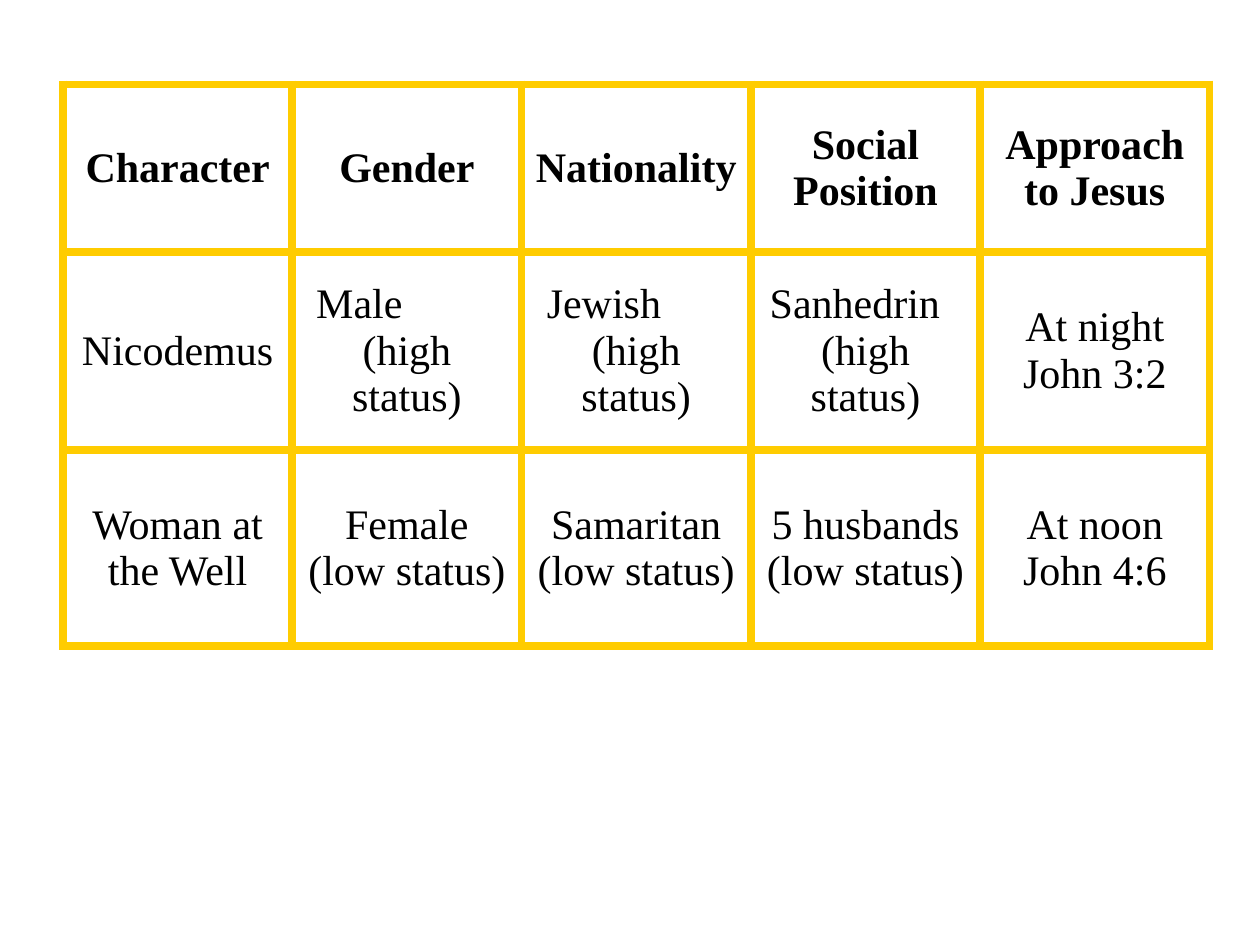
import pptx
import pptx.dml.color
import pptx.enum.text
import pptx.oxml
import pptx.oxml.ns
import pptx.util
from pptx.util import Inches

COLORS = {"text": "000000", "border": "FFCC00", "cell": "FFFFFF"}
FONT = "Times New Roman"
FONT_SIZE = 24
BORDER_WIDTH = 5

# Each cell is a list of paragraphs.
ROWS = [
    [["Character"], ["Gender"], ["Nationality"], ["Social Position"], ["Approach to Jesus"]],
    [["Nicodemus"], ["Male", "(high status)"], ["Jewish", "(high status)"],
     ["Sanhedrin", "(high status)"], ["At night", "John 3:2"]],
    [["Woman at the Well"], ["Female", "(low status)"], ["Samaritan", "(low status)"],
     ["5 husbands", "(low status)"], ["At noon", "John 4:6"]],
]
LEFT_INDENTS = {"Male": 0.09, "Jewish": 0.1, "Sanhedrin": 0.05}  # left-aligned words
ROW_HEIGHTS = [1.33, 1.57, 1.56]
COLUMN_WIDTH = 1.82
TABLE_LEFT, TABLE_TOP = 0.5, 0.67


def rgb(name):
    return pptx.dml.color.RGBColor.from_string(COLORS[name])


def add_borders(cell):
    properties = cell._tc.get_or_add_tcPr()
    for position, side in enumerate(("lnL", "lnR", "lnT", "lnB")):
        line = pptx.oxml.parse_xml(
            f'<a:{side} {pptx.oxml.ns.nsdecls("a")} w="{pptx.util.Pt(BORDER_WIDTH)}">'
            f'<a:solidFill><a:srgbClr val="{COLORS["border"]}"/></a:solidFill></a:{side}>')
        properties.insert(position, line)


def fill_cell(cell, lines, bold):
    cell.fill.solid()
    cell.fill.fore_color.rgb = rgb("cell")
    cell.vertical_anchor = pptx.enum.text.MSO_ANCHOR.MIDDLE
    cell.text = "\n".join(lines)
    for paragraph in cell.text_frame.paragraphs:
        paragraph.alignment = pptx.enum.text.PP_ALIGN.CENTER
        paragraph.font.name = FONT
        paragraph.font.size = pptx.util.Pt(FONT_SIZE)
        paragraph.font.bold = bold
        paragraph.font.color.rgb = rgb("text")
        if paragraph.text in LEFT_INDENTS:
            paragraph.alignment = pptx.enum.text.PP_ALIGN.LEFT
            indent = Inches(LEFT_INDENTS[paragraph.text])
            paragraph._p.get_or_add_pPr().set("marL", str(indent))
    add_borders(cell)


def main():
    presentation = pptx.Presentation()
    presentation.slide_width, presentation.slide_height = Inches(10), Inches(7.5)
    slide = presentation.slides.add_slide(presentation.slide_layouts[6])
    column_count = len(ROWS[0])
    table = slide.shapes.add_table(
        len(ROWS), column_count, Inches(TABLE_LEFT), Inches(TABLE_TOP),
        Inches(COLUMN_WIDTH * column_count), Inches(sum(ROW_HEIGHTS))).table
    table.horz_banding = False
    for column in table.columns:
        column.width = Inches(COLUMN_WIDTH)
    for row_index, (row, height) in enumerate(zip(ROWS, ROW_HEIGHTS)):
        table.rows[row_index].height = Inches(height)
        for column_index, lines in enumerate(row):
            fill_cell(table.cell(row_index, column_index), lines, bold=row_index == 0)
    presentation.save("out.pptx")


if __name__ == "__main__":
    main()
